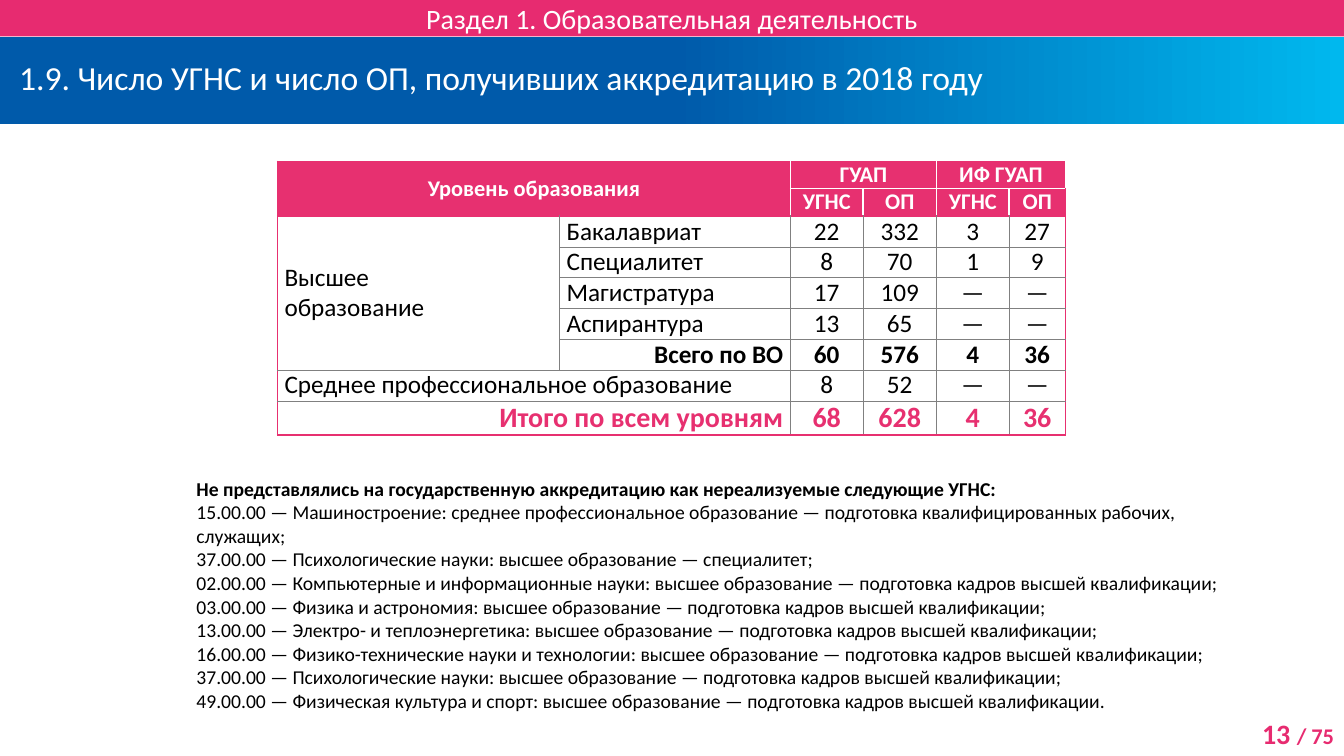
import lxml.etree
import pptx
import pptx.dml.color
import pptx.enum.shapes
import pptx.enum.text
import pptx.oxml.ns
import pptx.util

Cm = pptx.util.Cm
Pt = pptx.util.Pt
ALIGN = pptx.enum.text.PP_ALIGN
MIDDLE = pptx.enum.text.MSO_ANCHOR.MIDDLE
COLORS = {
    "banner": "E72B70", "accent": "E73070", "white": "FFFFFF", "black": "000000",
    "grid": "808080", "blue": "005AAA", "cyan": "00B8EE",
}


def set_font(font, size, color, bold=False):
    font.name = "Calibri"
    font.size = Pt(size)
    font.bold = bold
    font.color.rgb = pptx.dml.color.RGBColor.from_string(COLORS[color])


def set_borders(cell, borders):
    """Draw cell borders given as (color, points) for left, right, top, bottom."""
    properties = cell._tc.get_or_add_tcPr()
    for index, (tag, (color, width)) in enumerate(zip(("lnL", "lnR", "lnT", "lnB"), borders)):
        line = lxml.etree.Element(pptx.oxml.ns.qn("a:" + tag), w=str(int(Pt(width))))
        fill = lxml.etree.SubElement(line, pptx.oxml.ns.qn("a:solidFill"))
        lxml.etree.SubElement(fill, pptx.oxml.ns.qn("a:srgbClr"), val=COLORS[color])
        properties.insert(index, line)


presentation = pptx.Presentation()
presentation.slide_width = Cm(33.87)
presentation.slide_height = Cm(19.05)
slide = presentation.slides.add_slide(presentation.slide_layouts[5])

# Title bar
title = slide.shapes.title
title.left, title.top, title.width, title.height = Cm(0), Cm(0.92), Cm(33.87), Cm(2.2)
title.fill.gradient()
title.fill.gradient_angle = 0
for stop, position, color in zip(title.fill.gradient_stops, (0.5, 1), ("blue", "cyan")):
    stop.position = position
    stop.color.rgb = pptx.dml.color.RGBColor.from_string(COLORS[color])
frame = title.text_frame
frame.text = "1.9. Число УГНС и число ОП, получивших аккредитацию в 2018 году"
frame.auto_size = pptx.enum.text.MSO_AUTO_SIZE.NONE
frame.vertical_anchor = MIDDLE
frame.margin_left, frame.margin_right = Cm(0.48), Cm(0.25)
frame.margin_top = frame.margin_bottom = 0
paragraph = frame.paragraphs[0]
paragraph.alignment = ALIGN.LEFT
paragraph.line_spacing = Pt(24)
set_font(paragraph.font, 24, "white")

# Section banner
banner = slide.shapes.add_shape(
    pptx.enum.shapes.MSO_SHAPE.RECTANGLE, 0, 0, Cm(33.87), Cm(0.92))
banner.shadow.inherit = False
banner.fill.solid()
banner.fill.fore_color.rgb = pptx.dml.color.RGBColor.from_string(COLORS["banner"])
banner.line.fill.background()
frame = banner.text_frame
frame.text = "Раздел 1. Образовательная деятельность"
frame.vertical_anchor = MIDDLE
frame.margin_left = frame.margin_right = frame.margin_top = frame.margin_bottom = 0
frame.paragraphs[0].alignment = ALIGN.CENTER
set_font(frame.paragraphs[0].font, 20, "white")

# Accreditation table
rows = [
    ["Уровень образования", "", "ГУАП", "", "ИФ ГУАП", ""],
    ["", "", "УГНС", "ОП", "УГНС", "ОП"],
    ["Высшее\vобразование", "Бакалавриат", "22", "332", "3", "27"],
    ["", "Специалитет", "8", "70", "1", "9"],
    ["", "Магистратура", "17", "109", "—", "—"],
    ["", "Аспирантура", "13", "65", "—", "—"],
    ["", "Всего по ВО", "60", "576", "4", "36"],
    ["Среднее профессиональное образование", "", "8", "52", "—", "—"],
    ["Итого по всем уровням", "", "68", "628", "4", "36"],
]
column_widths = [7.11, 5.82, 1.83, 1.85, 1.83, 1.42]
row_heights = [0.69] * 2 + [0.77] * 6 + [0.85]
merges = [(0, 0, 1, 1), (0, 2, 0, 3), (0, 4, 0, 5), (2, 0, 6, 0), (7, 0, 7, 1), (8, 0, 8, 1)]
HEADER_ROWS, SUBTOTAL_ROW = 2, 6
last_row, last_column = len(rows) - 1, len(column_widths) - 1

table = slide.shapes.add_table(
    len(rows), len(column_widths), Cm(6.99), Cm(4.06),
    Cm(sum(column_widths)), Cm(sum(row_heights))).table
table.first_row = table.horz_banding = False
for column, width in zip(table.columns, column_widths):
    column.width = Cm(width)
for row, height in zip(table.rows, row_heights):
    row.height = Cm(height)
for top, left, bottom, right in merges:
    table.cell(top, left).merge(table.cell(bottom, right))

outer = ("accent", 1)
for r, values in enumerate(rows):
    header, total = r < HEADER_ROWS, r == last_row
    inner = ("white", 1) if header else ("grid", 0.25)
    for c, value in enumerate(values):
        cell = table.cell(r, c)
        cell.text = value
        cell.vertical_anchor = MIDDLE
        cell.margin_left = cell.margin_right = Cm(0.18)
        cell.margin_top = cell.margin_bottom = 0
        paragraph = cell.text_frame.paragraphs[0]
        if header or c >= 2:
            paragraph.alignment = ALIGN.CENTER
        elif total or (r == SUBTOTAL_ROW and c == 1):
            paragraph.alignment = ALIGN.RIGHT
        if header:
            set_font(paragraph.font, 16, "white", True)
            cell.fill.solid()
            cell.fill.fore_color.rgb = pptx.dml.color.RGBColor.from_string(COLORS["accent"])
        else:
            if total:
                set_font(paragraph.font, 20, "accent", True)
            else:
                set_font(paragraph.font, 18, "black", r == SUBTOTAL_ROW and c > 0)
            cell.fill.background()
        bottom_row = r + cell.span_height - 1 if cell.is_merge_origin else r
        set_borders(cell, [
            outer if c == 0 else inner,
            outer if c == last_column else inner,
            outer if r in (0, HEADER_ROWS) else inner,
            outer if bottom_row in (HEADER_ROWS - 1, last_row) else inner,
        ])

# Fields of study that were not submitted
notes = [
    "Не представлялись на государственную аккредитацию как нереализуемые следующие УГНС:",
    "15.00.00 — Машиностроение: среднее профессиональное образование — "
    "подготовка квалифицированных рабочих, служащих;",
    "37.00.00 — Психологические науки: высшее образование — специалитет;",
]
fields = [
    "02.00.00 — Компьютерные и информационные науки",
    "03.00.00 — Физика и астрономия",
    "13.00.00 — Электро- и теплоэнергетика",
    "16.00.00 — Физико-технические науки и технологии",
    "37.00.00 — Психологические науки",
    "49.00.00 — Физическая культура и спорт",
]
for field in fields:
    ending = "." if field == fields[-1] else ";"
    notes.append(f"{field}: высшее образование — подготовка кадров высшей квалификации{ending}")
frame = slide.shapes.add_textbox(Cm(4.7), Cm(11.89), Cm(27.23), Cm(5.64)).text_frame
frame.word_wrap = True
frame.text = "\n".join(notes)
for index, paragraph in enumerate(frame.paragraphs):
    set_font(paragraph.font, 14, "black", index == 0)

# Page number
frame = slide.shapes.add_textbox(Cm(30.82), Cm(17.93), Cm(3.05), Cm(1.12)).text_frame
frame.word_wrap = True
paragraph = frame.paragraphs[0]
paragraph.alignment = ALIGN.RIGHT
for text, size in (("13 ", 20), ("/ 75", 16)):
    run = paragraph.add_run()
    run.text = text
    set_font(run.font, size, "banner", True)

presentation.save("out.pptx")
